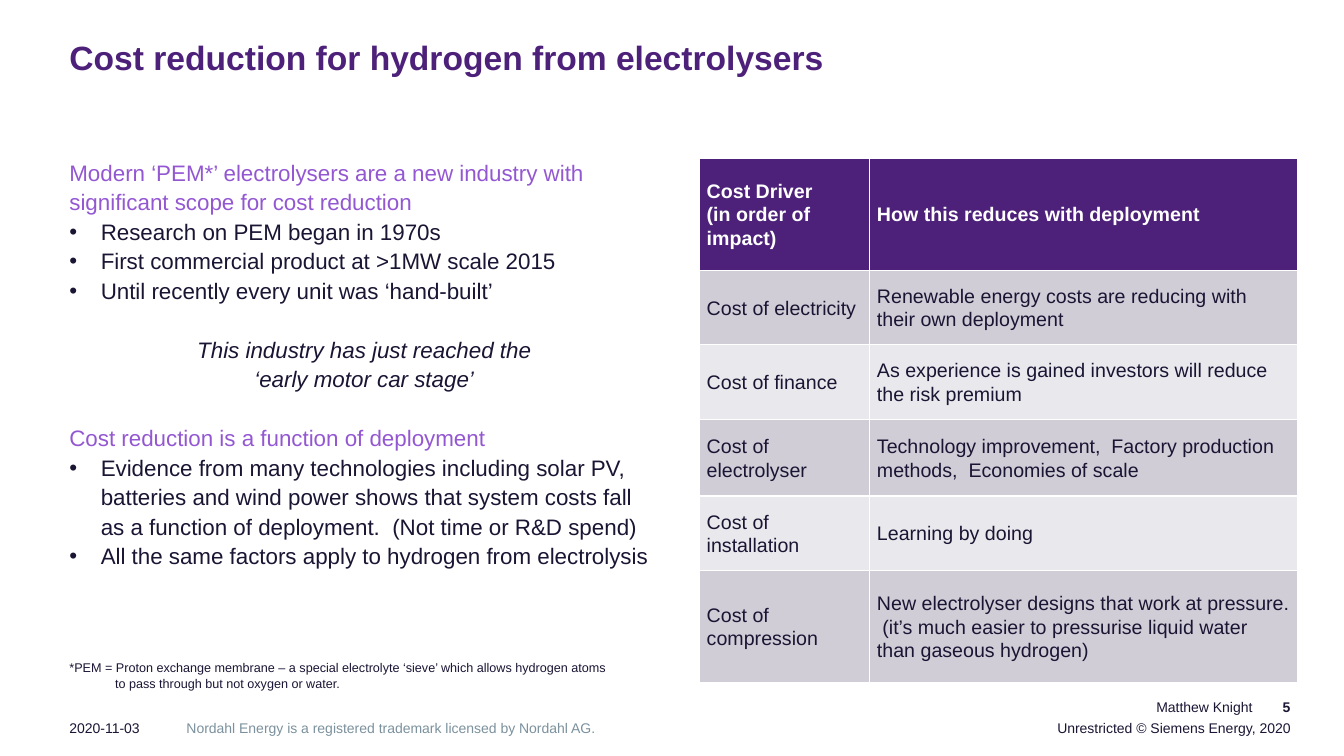
from dataclasses import dataclass

from lxml.etree import SubElement
from pptx import Presentation
from pptx.dml.color import RGBColor
from pptx.enum.text import MSO_ANCHOR as Anchor, PP_ALIGN as Align
from pptx.oxml.ns import qn
from pptx.util import Cm, Pt


@dataclass(frozen=True)
class Theme:
    font: str = "Arial"
    ink: str = "1B1534"
    purple: str = "4D217A"
    violet: str = "9457D2"
    grey: str = "7B919D"
    white: str = "FFFFFF"
    bands: tuple = ("D0CDD7", "E9E8EC")
    title_size: int = 24
    body_size: int = 16
    table_size: int = 14
    footer_size: int = 10
    note_size: int = 9


THEME = Theme()
LEFT_MARGIN = 1.75
BULLET_INDENT = 0.79
BLANK_LINE = 21

HEADER = ("Cost Driver\n(in order of impact)", "How this reduces with deployment")
DRIVERS = [
    ("Cost of electricity", "Renewable energy costs are reducing with their own deployment"),
    ("Cost of finance", "As experience is gained investors will reduce the risk premium"),
    ("Cost of electrolyser",
     "Technology improvement,  Factory production methods,  Economies of scale"),
    ("Cost of installation", "Learning by doing"),
    ("Cost of compression",
     "New electrolyser designs that work at pressure.  "
     "(it’s much easier to pressurise liquid water than gaseous hydrogen)"),
]
COLUMN_WIDTHS = (4.29, 10.77)
ROW_HEIGHTS = (2.82, 1.88, 1.88, 1.93, 1.88, 2.82)


def write(frame, text, size, color=THEME.ink, bold=False, italic=False, align=Align.LEFT,
          line=1.0, before=0, after=0, hang=0, bullet=False):
    """Add each line of text as a paragraph, filling the empty first one if there is one."""
    for index, words in enumerate(text.split("\n")):
        first = frame.paragraphs[0]
        para = frame.add_paragraph() if first.runs else first
        properties = para._p.get_or_add_pPr()
        if hang:
            properties.set("marL", str(Cm(hang)))
            properties.set("indent", str(-Cm(hang)))
        if bullet:
            SubElement(properties, qn("a:buFont")).set("typeface", THEME.font)
            SubElement(properties, qn("a:buChar")).set("char", "•")
        para.alignment = align
        para.line_spacing = line
        para.space_before = Pt(before if index == 0 else 0)
        para.space_after = Pt(after)
        span = para.add_run()
        span.text = words
        font = span.font
        font.name, font.size, font.bold, font.italic = THEME.font, Pt(size), bold, italic
        font.color.rgb = RGBColor.from_string(color)


def set_frame(frame, insets=(0, 0, 0, 0), anchor=Anchor.TOP):
    frame.word_wrap = True
    frame.vertical_anchor = anchor
    (frame.margin_left, frame.margin_top,
     frame.margin_right, frame.margin_bottom) = map(Cm, insets)
    return frame


def add_text_frame(page, box, **layout):
    return set_frame(page.shapes.add_textbox(*map(Cm, box)).text_frame, **layout)


def add_title(page, box):
    title = page.shapes.title
    title.left, title.top, title.width, title.height = map(Cm, box)
    frame = set_frame(title.text_frame, insets=(LEFT_MARGIN, 1.04, 0, 0))
    write(frame, "Cost reduction for hydrogen from electrolysers", THEME.title_size,
          THEME.purple, bold=True, line=0.9)


def add_argument(page, box):
    frame = add_text_frame(page, box)

    def add_line(text, **style):
        write(frame, text, THEME.body_size, line=1.1, **style)

    def add_bullets(*points):
        add_line("\n".join(points), hang=BULLET_INDENT, bullet=True)

    add_line("Modern ‘PEM*’ electrolysers are a new industry with significant scope "
             "for cost reduction", color=THEME.violet)
    add_bullets("Research on PEM began in 1970s",
                "First commercial product at >1MW scale 2015",
                "Until recently every unit was ‘hand-built’")
    add_line("This industry has just reached the\n‘early motor car stage’",
             italic=True, align=Align.CENTER, before=BLANK_LINE)
    add_line("Cost reduction is a function of deployment", color=THEME.violet,
             before=BLANK_LINE)
    add_bullets("Evidence from many technologies including solar PV, batteries and wind power "
                "shows that system costs fall as a function of deployment.  "
                "(Not time or R&D spend)",
                "All the same factors apply to hydrogen from electrolysis")


def add_footnote(page, box):
    write(add_text_frame(page, box),
          "*PEM = Proton exchange membrane – a special electrolyte ‘sieve’ which allows "
          "hydrogen atoms to pass through but not oxygen or water.",
          THEME.note_size, line=1.1, hang=1.15)


def add_driver_table(page, box):
    rows = [HEADER, *DRIVERS]
    table = page.shapes.add_table(len(rows), len(HEADER), *map(Cm, box)).table
    table.horz_banding = False
    for column, width in zip(table.columns, COLUMN_WIDTHS):
        column.width = Cm(width)
    for row, height in zip(table.rows, ROW_HEIGHTS):
        row.height = Cm(height)
    for row_index, texts in enumerate(rows):
        is_header = row_index == 0
        fill = THEME.purple if is_header else THEME.bands[(row_index - 1) % 2]
        color = THEME.white if is_header else THEME.ink
        gap = 0 if is_header else 3
        for column_index, text in enumerate(texts):
            cell = table.cell(row_index, column_index)
            cell.fill.solid()
            cell.fill.fore_color.rgb = RGBColor.from_string(fill)
            cell.vertical_anchor = Anchor.MIDDLE
            cell.margin_left = cell.margin_right = Cm(0.18)
            cell.margin_top = cell.margin_bottom = 0
            write(cell.text_frame, text, THEME.table_size, color, bold=is_header,
                  line=1.07, before=gap, after=gap)


def add_footer(page, box):
    """Place author and page number above the line of date, trademark and copyright."""
    left, top, width, height = box
    right, middle, half = left + width, top + 1, width / 2
    low = height - 1
    above = {"anchor": Anchor.BOTTOM}
    parts = [
        ("Matthew Knight", (right - half, top, half, 1),
         {"insets": (0, 0, 2.31, 0.1), **above}, {"align": Align.RIGHT}),
        ("5", (right - 2.31, top, 2.31, 1),
         {"insets": (0, 0, 1.35, 0.1), **above}, {"align": Align.RIGHT, "bold": True}),
        ("2020-11-03", (left, middle, 4.7, low), {"insets": (LEFT_MARGIN, 0, 0, 0)}, {}),
        ("Nordahl Energy is a registered trademark licensed by Nordahl AG.",
         (left + 4.7, middle, 12.22, low), {}, {"color": THEME.grey}),
        ("Unrestricted © Siemens Energy, 2020", (right - half, middle, half, low),
         {"insets": (LEFT_MARGIN, 0, 1.35, 0)}, {"align": Align.RIGHT}),
    ]
    for text, place, layout, style in parts:
        write(add_text_frame(page, place, **layout), text, THEME.footer_size, **style)


def main():
    deck = Presentation()
    deck.slide_width, deck.slide_height = Cm(33.87), Cm(19.05)
    page = deck.slides.add_slide(deck.slide_layouts[5])
    add_title(page, (0, 0, 26.82, 3.94))
    add_argument(page, (LEFT_MARGIN, 3.94, 14.86, 12.4))
    add_footnote(page, (LEFT_MARGIN, 16.58, 13.68, 0.9))
    add_driver_table(page, (17.63, 3.99, sum(COLUMN_WIDTHS), sum(ROW_HEIGHTS)))
    add_footer(page, (0, 17.13, 33.87, 1.92))
    deck.save("out.pptx")


if __name__ == "__main__":
    main()
